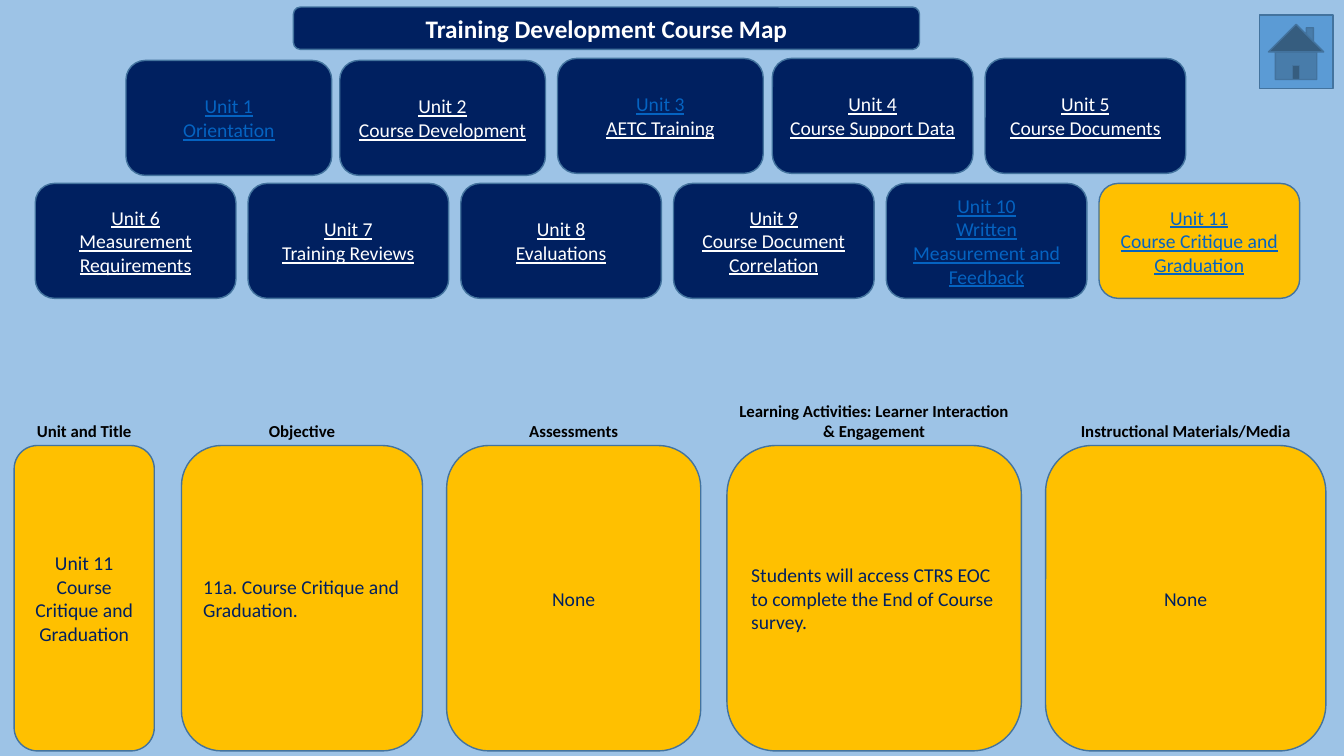
from pptx import Presentation
from pptx.dml.color import RGBColor
from pptx.enum.shapes import MSO_SHAPE
from pptx.enum.text import MSO_ANCHOR, PP_ALIGN
from pptx.util import Inches, Pt

SKY = RGBColor(0x9D, 0xC3, 0xE6)
BLUE = RGBColor(0x5B, 0x9B, 0xD5)
EDGE = RGBColor(0x43, 0x73, 0x9E)
NAVY = RGBColor(0x00, 0x20, 0x60)
GOLD = RGBColor(0xFF, 0xC0, 0x00)
LINK = RGBColor(0x05, 0x63, 0xC1)
WHITE = RGBColor(0xFF, 0xFF, 0xFF)
BLACK = RGBColor(0x00, 0x00, 0x00)

prs = Presentation()
prs.slide_width, prs.slide_height = Inches(13.33), Inches(7.5)
s = prs.slides.add_slide(prs.slide_layouts[6])
s.background.fill.solid()
s.background.fill.fore_color.rgb = SKY


def add_box(kind, box, fill):
    sp = s.shapes.add_shape(kind, *map(Inches, box))
    sp.shadow.inherit = False
    sp.fill.solid()
    sp.fill.fore_color.rgb = fill
    sp.line.color.rgb = EDGE
    sp.line.width = Pt(1)
    return sp


def write(sp, lines, size, anchor=MSO_ANCHOR.MIDDLE, align=PP_ALIGN.CENTER,
          bold=False, underline=False):
    """Fill a shape with one paragraph per (text, colour) pair."""
    tf = sp.text_frame
    tf.word_wrap = True
    tf.vertical_anchor = anchor
    for i, (text, color) in enumerate(lines):
        p = tf.paragraphs[0] if i == 0 else tf.add_paragraph()
        p.alignment = align
        r = p.add_run()
        r.text = text
        r.font.name = "Calibri"
        r.font.size = Pt(size)
        r.font.bold = bold
        r.font.underline = underline
        r.font.color.rgb = color


add_box(MSO_SHAPE.ACTION_BUTTON_HOME, (12.49, 0.15, 0.73, 0.73), BLUE)

# Detail columns: left, width, heading, alignment, body lines
COLUMNS = [
    (0.14, 1.39, "Unit and Title", PP_ALIGN.CENTER,
     ["Unit 11", "Course Critique and Graduation"]),
    (1.8, 2.39, "Objective", PP_ALIGN.LEFT,
     ["11a. Course Critique and Graduation."]),
    (4.43, 2.52, "Assessments", PP_ALIGN.CENTER, ["None"]),
    (7.21, 2.92, "Learning Activities: Learner Interaction & Engagement",
     PP_ALIGN.LEFT,
     ["Students will access CTRS EOC to complete the End of Course survey."]),
    (10.37, 2.78, "Instructional Materials/Media", PP_ALIGN.CENTER, ["None"]),
]
HEADING_TOP, BODY_TOP, BODY_HEIGHT = 3.92, 4.42, 3.03
for left, width, heading, align, body in COLUMNS:
    label = s.shapes.add_textbox(Inches(left), Inches(HEADING_TOP), Inches(width),
                                 Inches(BODY_TOP - HEADING_TOP))
    write(label, [(heading, BLACK)], 12, anchor=MSO_ANCHOR.BOTTOM, bold=True)
    sp = add_box(MSO_SHAPE.ROUNDED_RECTANGLE,
                 (left, BODY_TOP, width, BODY_HEIGHT), GOLD)
    write(sp, [(line, NAVY) for line in body], 14, align=align)

# Course units: name, number colour, name colour, fill
UNITS = [
    ("Orientation", LINK, LINK, NAVY),
    ("Course Development", WHITE, WHITE, NAVY),
    ("AETC Training", LINK, WHITE, NAVY),
    ("Course Support Data", WHITE, WHITE, NAVY),
    ("Course Documents", WHITE, WHITE, NAVY),
    ("Measurement Requirements", WHITE, WHITE, NAVY),
    ("Training Reviews", WHITE, WHITE, NAVY),
    ("Evaluations", WHITE, WHITE, NAVY),
    ("Course Document Correlation", WHITE, WHITE, NAVY),
    ("Written Measurement and Feedback", LINK, LINK, NAVY),
    ("Course Critique and Graduation", LINK, LINK, GOLD),
]
UNIT_HEIGHT = 1.14
TOP_ROW = [(1.25, 0.6, 2.04), (3.37, 0.6, 2.04), (5.53, 0.58, 2.04),
           (7.66, 0.58, 1.99), (9.77, 0.58, 1.99)]
BOTTOM_ROW = [(0.35 + 2.11 * col, 1.82, 1.99) for col in range(6)]
for number, (place, unit) in enumerate(zip(TOP_ROW + BOTTOM_ROW, UNITS), start=1):
    name, number_color, name_color, fill = unit
    sp = add_box(MSO_SHAPE.ROUNDED_RECTANGLE, (*place, UNIT_HEIGHT), fill)
    write(sp, [(f"Unit {number}", number_color), (name, name_color)], 14,
          underline=True)

title = add_box(MSO_SHAPE.ROUNDED_RECTANGLE, (2.91, 0.07, 6.21, 0.42), NAVY)
write(title, [("Training Development Course Map", WHITE)], 18, bold=True)

prs.save("out.pptx")
